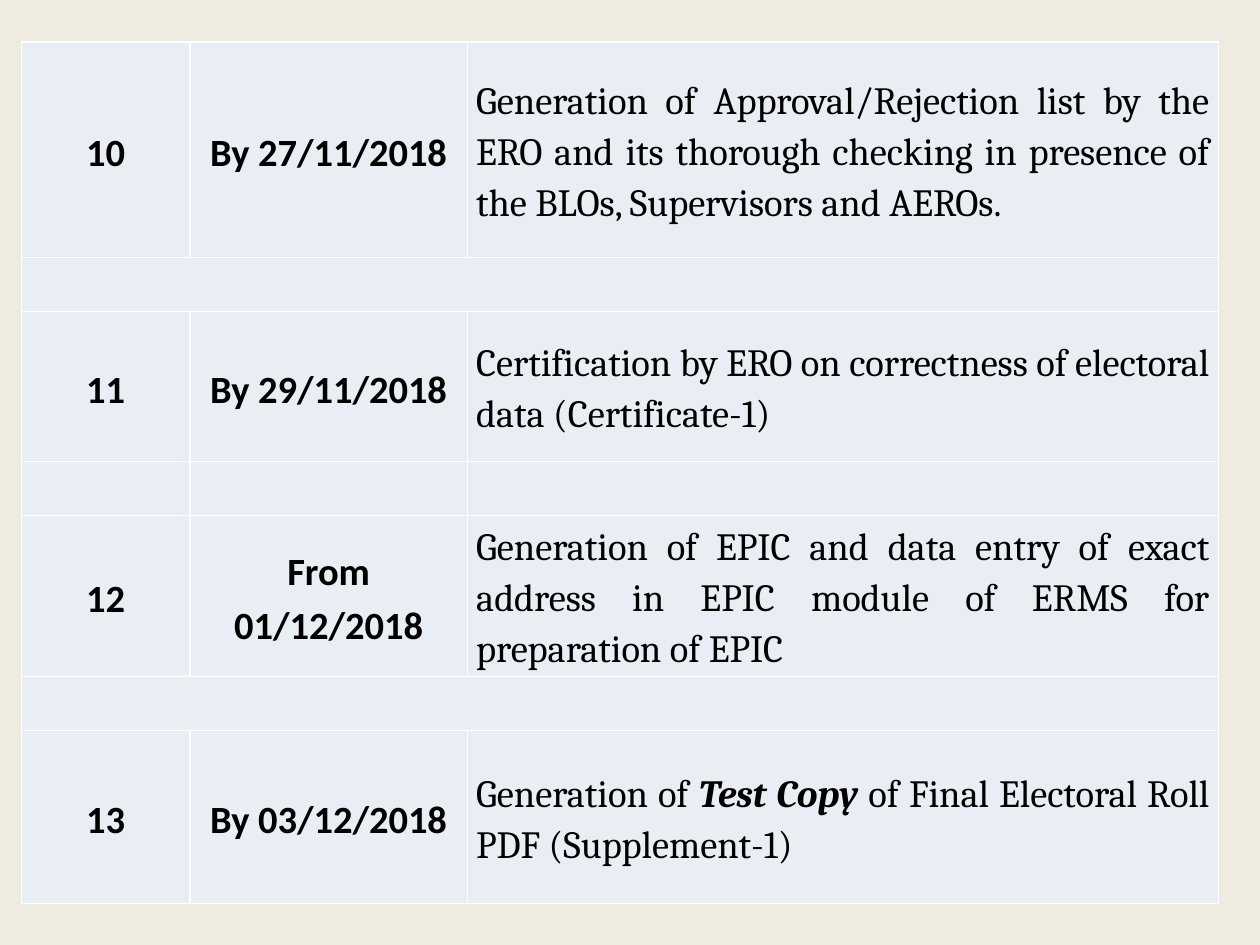
from lxml.etree import SubElement
from pptx import Presentation
from pptx.dml.color import RGBColor
from pptx.enum.text import MSO_ANCHOR as Anchor, PP_ALIGN as Align
from pptx.oxml.ns import qn
from pptx.util import Cm, Pt

# Content: number, date, task runs (text, stressed)
STEPS = [
    ("10", "By 27/11/2018", [
        ("Generation of Approval/Rejection list by the ERO and its thorough "
         "checking in presence of the BLOs, Supervisors and AEROs.", False)]),
    ("11", "By 29/11/2018", [
        ("Certification by ERO on correctness of electoral data "
         "(Certificate-1)", False)]),
    ("12", "From 01/12/2018", [
        ("Generation of EPIC and data entry of exact address in EPIC module "
         "of ERMS for preparation of EPIC", False)]),
    ("13", "By 03/12/2018", [
        ("Generation of ", False),
        ("Test Copy", True),
        (" of Final Electoral Roll PDF (Supplement-1)", False)]),
]
WIDTHS = [3.4, 5.59, 15.14]
HEIGHTS = [4.34, 3.02, 3.25, 3.48]
GAP = 1.09
MERGED = {1, 5}

PAPER = RGBColor(0xEE, 0xEC, 0xE1)
PALE = RGBColor(0xE9, 0xED, 0xF4)
BLACK = RGBColor(0, 0, 0)
WHITE = RGBColor(0xFF, 0xFF, 0xFF)


def style(cell):
    """Give a cell its fill, margins and white borders."""
    cell.vertical_anchor = Anchor.MIDDLE
    cell.margin_left = cell.margin_right = Cm(0.18)
    cell.margin_top = cell.margin_bottom = 0
    props = cell._tc.get_or_add_tcPr()
    for side in ("lnL", "lnR", "lnT", "lnB"):
        line = SubElement(props, qn("a:" + side), w=str(Pt(1)))
        paint = SubElement(line, qn("a:solidFill"))
        SubElement(paint, qn("a:srgbClr"), val=str(WHITE))
    cell.fill.solid()
    cell.fill.fore_color.rgb = PALE


def write(cell, runs, align, face):
    """Add (text, bold, italic) runs to a cell."""
    para = cell.text_frame.paragraphs[0]
    para.alignment = align
    para.line_spacing = 1.15
    for text, bold, italic in runs:
        run = para.add_run()
        run.text = text
        font = run.font
        font.name, font.size = face, Pt(22)
        font.bold, font.italic = bold, italic
        font.color.rgb = BLACK


def main():
    deck = Presentation()
    deck.slide_width, deck.slide_height = Cm(25.4), Cm(19.05)
    slide = deck.slides.add_slide(deck.slide_layouts[6])
    slide.background.fill.solid()
    slide.background.fill.fore_color.rgb = PAPER

    # Table grid: a narrow gap row between steps
    count = 2 * len(STEPS) - 1
    total = sum(HEIGHTS) + GAP * (len(STEPS) - 1)
    table = slide.shapes.add_table(count, len(WIDTHS), Cm(0.43), Cm(0.85),
                                   Cm(sum(WIDTHS)), Cm(total)).table
    table.first_row = table.horz_banding = False
    for col, width in zip(table.columns, WIDTHS):
        col.width = Cm(width)
    for i, row in enumerate(table.rows):
        row.height = Cm(GAP if i % 2 else HEIGHTS[i // 2])
        for cell in row.cells:
            style(cell)
    for i in MERGED:
        table.cell(i, 0).merge(table.cell(i, len(WIDTHS) - 1))

    # Steps
    for i, (number, date, task) in enumerate(STEPS):
        first, second, third = table.rows[2 * i].cells
        write(first, [(number, True, False)], Align.CENTER, "Calibri")
        write(second, [(date, True, False)], Align.CENTER, "Calibri")
        write(third, [(text, mark, mark) for text, mark in task],
              Align.JUSTIFY, "Cambria")

    deck.save("out.pptx")


if __name__ == "__main__":
    main()
